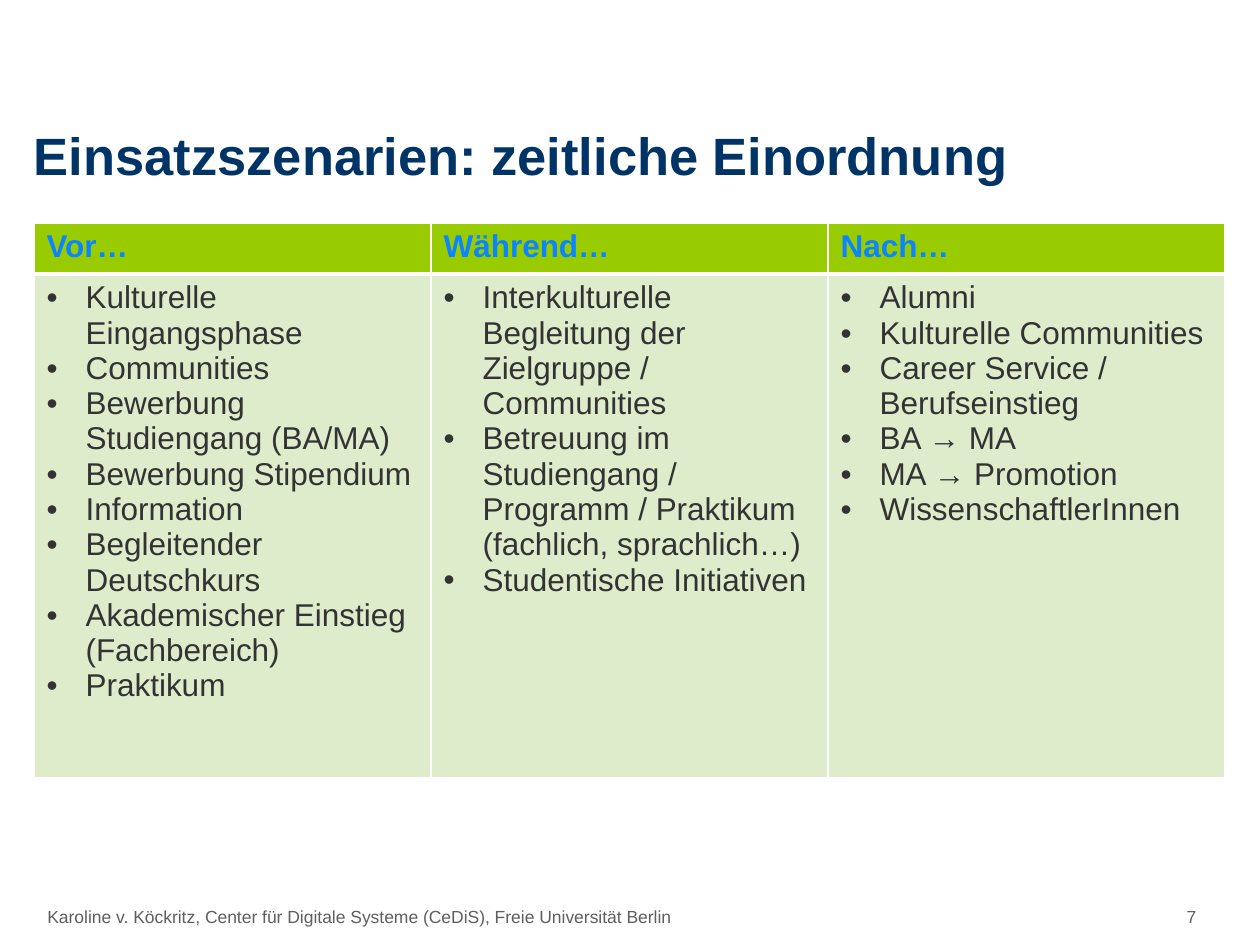
from dataclasses import dataclass
from lxml import etree
from pptx import Presentation
from pptx.dml.color import RGBColor
from pptx.enum.text import MSO_ANCHOR, PP_ALIGN
from pptx.oxml.ns import qn
from pptx.util import Inches, Pt


@dataclass(frozen=True)
class Theme:
    font: str = "Arial"
    title: str = "003366"
    head: str = "0A85FF"
    body: str = "333333"
    footer: str = "5F5F5F"
    head_fill: str = "99CC00"
    body_fill: str = "DEECCB"
    rule: str = "FFFFFF"
    title_size: int = 30
    table_size: int = 18
    footer_size: int = 10


THEME = Theme()
PX_PER_INCH = 126

PHASES = {
    "Vor…": [
        "Kulturelle Eingangsphase",
        "Communities",
        "Bewerbung Studiengang (BA/MA)",
        "Bewerbung Stipendium",
        "Information",
        "Begleitender Deutschkurs",
        "Akademischer Einstieg (Fachbereich)",
        "Praktikum",
    ],
    "Während…": [
        "Interkulturelle Begleitung der Zielgruppe / Communities",
        "Betreuung im Studiengang / Programm / Praktikum (fachlich, sprachlich…)",
        "Studentische Initiativen",
    ],
    "Nach…": [
        "Alumni",
        "Kulturelle Communities",
        "Career Service / Berufseinstieg",
        "BA → MA",
        "MA → Promotion",
        "WissenschaftlerInnen",
    ],
}


def px(n):
    return round(n * Inches(1) / PX_PER_INCH)


def set_all(obj, values):
    for name, value in values.items():
        setattr(obj, name, value)


def add_text(p, text, size, color, bold=False):
    r = p.add_run()
    r.text = text
    set_all(r.font, {"name": THEME.font, "size": Pt(size), "bold": bold})
    r.font.color.rgb = RGBColor.from_string(color)


def add_bullet(p, indent):
    pPr = p._p.get_or_add_pPr()
    pPr.set("marL", str(px(indent)))
    pPr.set("indent", str(-px(indent)))
    etree.SubElement(pPr, qn("a:buFont"), typeface=THEME.font)
    etree.SubElement(pPr, qn("a:buChar"), char="•")


def style_cell(cell, fill, top, bottom):
    tcPr = cell._tc.get_or_add_tcPr()
    for side, width in {"L": 1, "R": 1, "T": top, "B": bottom}.items():
        ln = etree.SubElement(tcPr, qn(f"a:ln{side}"), w=str(Pt(width)))
        solid = etree.SubElement(ln, qn("a:solidFill"))
        etree.SubElement(solid, qn("a:srgbClr"), val=THEME.rule)
    cell.fill.solid()
    cell.fill.fore_color.rgb = RGBColor.from_string(fill)


def place_title(s, x, y, w, h, text):
    sp = s.shapes.title
    set_all(sp, {"left": px(x), "top": px(y), "width": px(w), "height": px(h)})
    tf = sp.text_frame
    set_all(tf, {"margin_left": 0, "margin_right": 0, "margin_top": 0,
                 "margin_bottom": 0, "vertical_anchor": MSO_ANCHOR.MIDDLE})
    p = tf.paragraphs[0]
    set_all(p, {"alignment": PP_ALIGN.LEFT, "line_spacing": 0.85})
    add_text(p, text, THEME.title_size, THEME.title, True)


def place_phases(s, x, y, w, head_h, body_h, phases):
    frame = s.shapes.add_table(2, len(phases), px(x), px(y), px(w), px(head_h + body_h))
    table = frame.table
    table.horz_banding = False
    for row, height in zip(table.rows, (head_h, body_h)):
        row.height = px(height)
    for i, (phase, items) in enumerate(phases.items()):
        table.columns[i].width = px(w // len(phases))
        head, body = table.cell(0, i), table.cell(1, i)
        style_cell(head, THEME.head_fill, 1, 3)
        style_cell(body, THEME.body_fill, 3, 1)
        add_text(head.text_frame.paragraphs[0], phase, THEME.table_size, THEME.head, True)
        tf = body.text_frame
        for n, item in enumerate(items):
            p = tf.add_paragraph() if n else tf.paragraphs[0]
            add_bullet(p, 39)
            add_text(p, item, THEME.table_size, THEME.body)


def place_footer(s, x, y, w, h, text, number):
    tf = s.shapes.add_textbox(px(x), px(y), px(w), px(h)).text_frame
    tf.word_wrap = True
    p = tf.paragraphs[0]
    p.line_spacing = 0.65
    tabs = etree.SubElement(p._p.get_or_add_pPr(), qn("a:tabLst"))
    etree.SubElement(tabs, qn("a:tab"), pos=str(px(w - 76)), algn="r")
    add_text(p, f"{text}\t{number}", THEME.footer_size, THEME.footer)


def main():
    prs = Presentation()
    set_all(prs, {"slide_width": Inches(10), "slide_height": Inches(7.5)})
    s = prs.slides.add_slide(prs.slide_layouts[5])
    place_footer(s, 35, 906, 1225, 39,
                 "Karoline v. Köckritz, Center für Digitale Systeme (CeDiS), "
                 "Freie Universität Berlin", 7)
    place_title(s, 34, 130, 1191, 59, "Einsatzszenarien: zeitliche Einordnung")
    place_phases(s, 34, 223, 1191, 51, 504, PHASES)
    prs.save("out.pptx")


if __name__ == "__main__":
    main()
